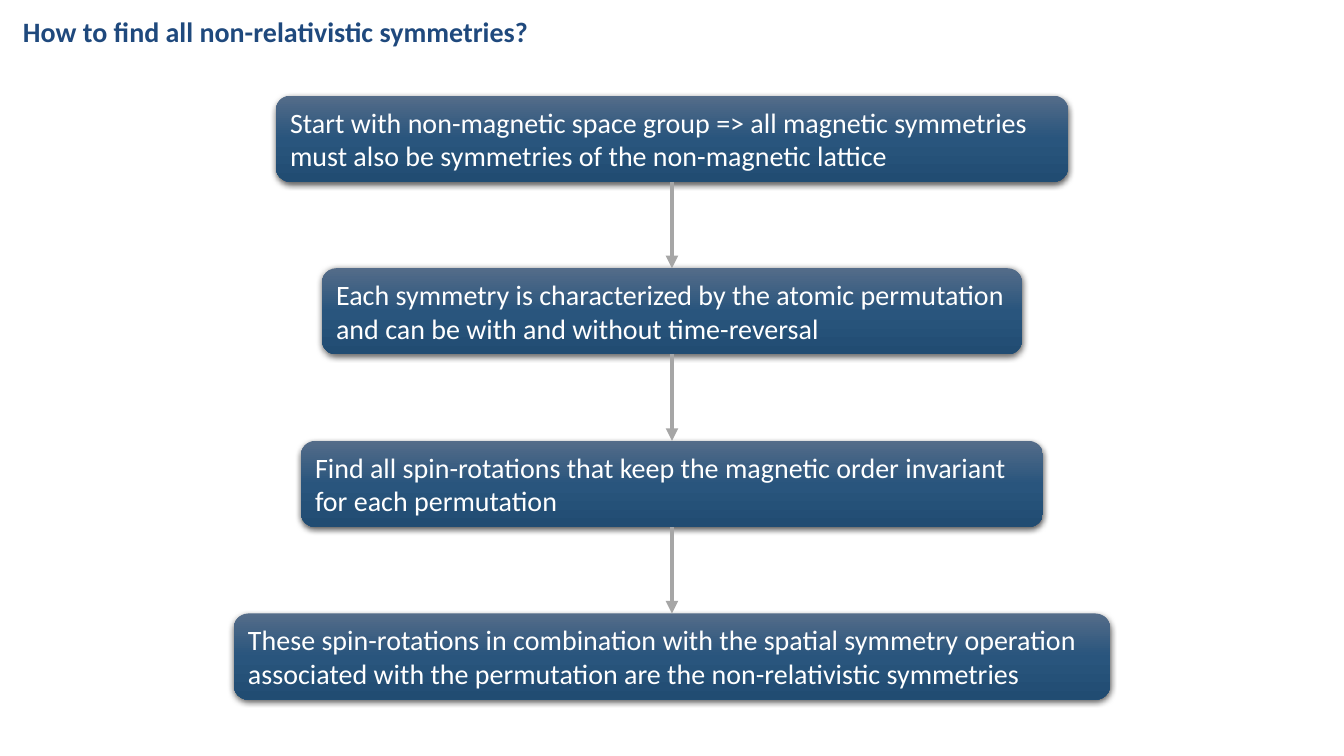
import pptx
import pptx.util
import pptx.dml.color
import pptx.enum.shapes
import pptx.enum.text
import pptx.oxml
import pptx.oxml.ns
from pptx.util import Cm

NS = pptx.oxml.ns.nsdecls("a")
qn = pptx.oxml.ns.qn


def rgb(value):
    return pptx.dml.color.RGBColor.from_string(value)


class FlowSlide:
    font = "Calibri"
    size = 20
    gradient = ((0, "546C89"), (50, "29557D"), (100, "214C72"))
    arrow_color = "A6A6A6"

    def __init__(self, prs):
        self.s = prs.slides.add_slide(prs.slide_layouts[6])

    def set_text(self, sp, text, color, bold=False):
        tf = sp.text_frame
        tf.word_wrap = True
        tf.auto_size = pptx.enum.text.MSO_AUTO_SIZE.SHAPE_TO_FIT_TEXT
        p = tf.paragraphs[0]
        p.text = text
        p.alignment = pptx.enum.text.PP_ALIGN.LEFT
        p.font.name = self.font
        p.font.size = pptx.util.Pt(self.size)
        p.font.bold = bold
        p.font.color.rgb = rgb(color)

    def title(self, text, x, y, w, h):
        sp = self.s.shapes.add_textbox(Cm(x), Cm(y), Cm(w), Cm(h))
        self.set_text(sp, text, "1F497D", bold=True)

    def box(self, text, x, y, w, h):
        sp = self.s.shapes.add_shape(
            pptx.enum.shapes.MSO_SHAPE.ROUNDED_RECTANGLE, Cm(x), Cm(y), Cm(w), Cm(h))
        sp.line.fill.background()
        sp.fill.gradient()
        sp.fill.gradient_angle = 270
        spPr = sp._element.spPr
        stops = spPr.find(".//" + qn("a:gsLst"))
        for gs in list(stops):
            stops.remove(gs)
        for pos, color in self.gradient:
            stops.append(pptx.oxml.parse_xml(
                f'<a:gs {NS} pos="{pos * 1000}"><a:srgbClr val="{color}"/></a:gs>'))
        sp.shadow.inherit = False
        spPr.find(qn("a:effectLst")).append(pptx.oxml.parse_xml(
            f'<a:outerShdw {NS} blurRad="57150" dist="19050" dir="5400000" '
            'algn="ctr" rotWithShape="0"><a:srgbClr val="000000">'
            '<a:alpha val="63000"/></a:srgbClr></a:outerShdw>'))
        self.set_text(sp, text, "FFFFFF")
        sp.text_frame.vertical_anchor = pptx.enum.text.MSO_ANCHOR.MIDDLE
        return sp

    def arrow(self, upper, lower):
        cx = self.s.shapes.add_connector(
            pptx.enum.shapes.MSO_CONNECTOR.STRAIGHT, 0, 0, 0, 0)
        cx.begin_connect(upper, 2)
        cx.end_connect(lower, 0)
        cx.line.color.rgb = rgb(self.arrow_color)
        cx.line.width = pptx.util.Pt(3)
        spPr = cx._element.spPr
        spPr.find(qn("a:ln")).append(
            pptx.oxml.parse_xml(f'<a:tailEnd {NS} type="triangle"/>'))
        spPr.append(pptx.oxml.parse_xml(f"<a:effectLst {NS}/>"))


STEPS = (
    ("Start with non-magnetic space group => all magnetic symmetries "
     "must also be symmetries of the non-magnetic lattice", 19.96),
    ("Each symmetry is characterized by the atomic permutation "
     "and can be with and without time-reversal", 17.64),
    ("Find all spin-rotations that keep the magnetic order invariant "
     "for each permutation", 18.7),
    ("These spin-rotations in combination with the spatial symmetry operation "
     "associated with the permutation are the non-relativistic symmetries", 22.08),
)
SLIDE_W, SLIDE_H = 33.87, 19.05
TOP, PITCH, BOX_H = 2.41, 4.35, 2.17


def main():
    prs = pptx.Presentation()
    prs.slide_width = Cm(SLIDE_W)
    prs.slide_height = Cm(SLIDE_H)
    flow = FlowSlide(prs)
    flow.title("How to find all non-relativistic symmetries?", 0.33, 0.25, 14.5, 1.11)
    boxes = [flow.box(text, (SLIDE_W - w) / 2, TOP + i * PITCH, w, BOX_H)
             for i, (text, w) in enumerate(STEPS)]
    for upper, lower in zip(boxes, boxes[1:]):
        flow.arrow(upper, lower)
    prs.save("out.pptx")


if __name__ == "__main__":
    main()
